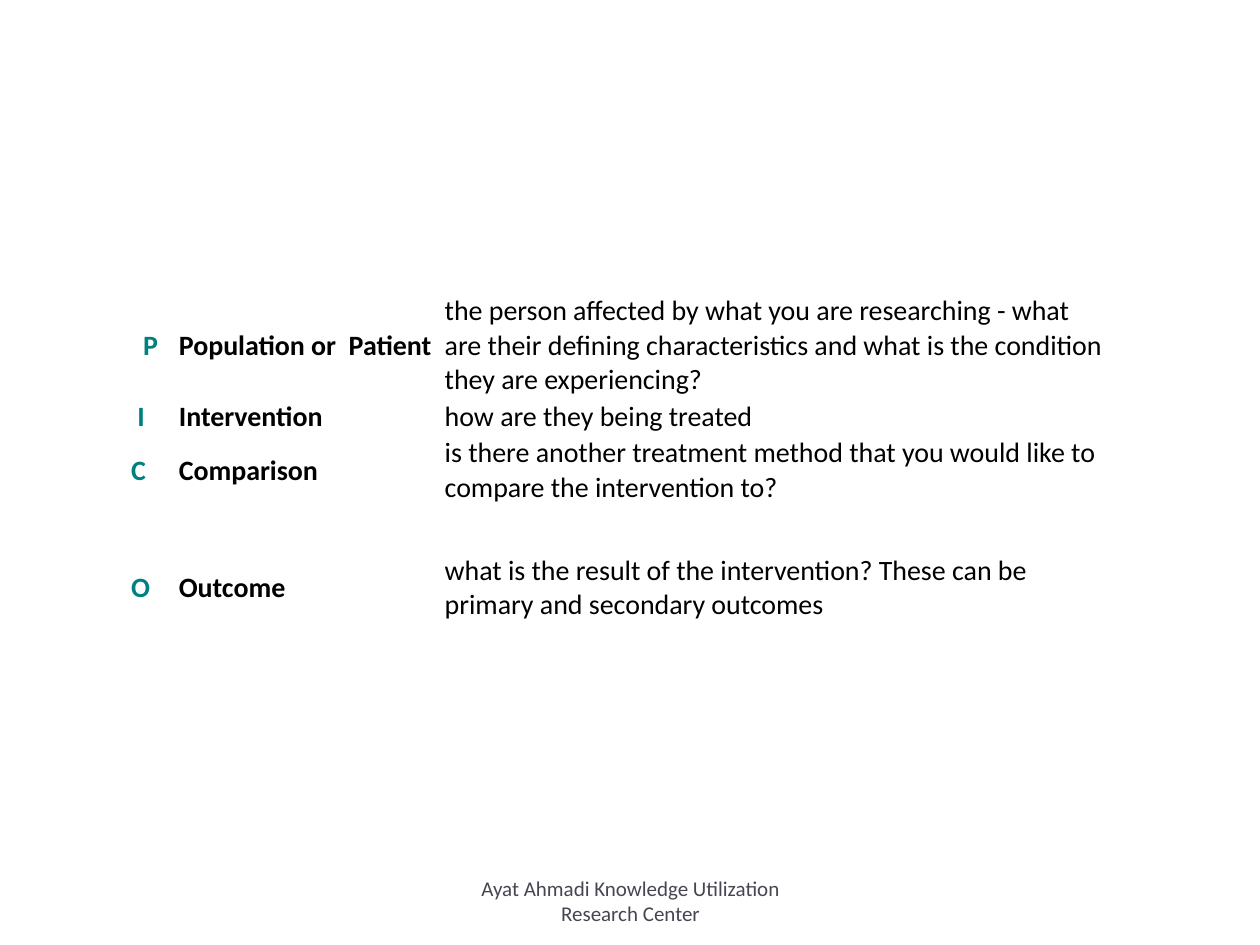
import pptx
import pptx.dml.color
import pptx.enum.text
import pptx.util

ALIGN = pptx.enum.text.PP_ALIGN
MIDDLE = pptx.enum.text.MSO_ANCHOR.MIDDLE
TEAL, BLACK, SLATE = "008080", "000000", "464653"
WIDE, HIGH = 10, 7.5
INSET = 0.01

# Letter, its left inset in inches (None centres it), term, meaning
ROWS = [
    ("P", None, "Population or  Patient",
     "the person affected by what you are researching - what are their "
     "defining characteristics and what is the condition they are "
     "experiencing?"),
    ("I", 0.11, "Intervention", "how are they being treated"),
    ("C", 0.06, "Comparison",
     "is there another treatment method that you would like to compare "
     "the intervention to?"),
    ("O", 0.06, "Outcome",
     "what is the result of the intervention? These can be primary and "
     "secondary outcomes"),
]
COLS = (0.43, 2.11, 5.25)
TALLS = (0.82, 0.28, 0.5, 1.3)


def hue(code):
    return pptx.dml.color.RGBColor.from_string(code)


class Page:
    """Holds the deck, the current slide and its text style."""

    face = "Calibri"

    def __init__(self):
        self.deck = pptx.Presentation()
        self.deck.slide_width = pptx.util.Inches(WIDE)
        self.deck.slide_height = pptx.util.Inches(HIGH)
        self.slide = self.deck.slides.add_slide(self.deck.slide_layouts[6])

    def place(self, left, top, width, height):
        """Turn shares of the slide into lengths."""
        sides = (WIDE, HIGH, WIDE, HIGH)
        return [pptx.util.Inches(part * side)
                for part, side in zip((left, top, width, height), sides)]

    def text(self, frame, words, size, color, bold=False, align=ALIGN.LEFT):
        frame.word_wrap = True
        para = frame.paragraphs[0]
        para.alignment = align
        run = para.add_run()
        run.text = words
        look = {"name": self.face, "size": pptx.util.Pt(size), "bold": bold}
        for key, value in look.items():
            setattr(run.font, key, value)
        run.font.color.rgb = hue(color)

    def cell(self, cell, words, color, bold, left=INSET, align=ALIGN.LEFT):
        edge = pptx.util.Inches(INSET)
        look = {"margin_left": pptx.util.Inches(left), "margin_right": edge,
                "margin_top": edge, "margin_bottom": edge,
                "vertical_anchor": MIDDLE}
        for key, value in look.items():
            setattr(cell, key, value)
        cell.fill.background()
        self.text(cell.text_frame, words, 16, color, bold, align)

    def table(self, box, rows):
        grid = self.slide.shapes.add_table(
            len(rows), len(COLS), *self.place(*box)).table
        grid.first_row = grid.horz_banding = False
        for col, width in zip(grid.columns, COLS):
            col.width = pptx.util.Inches(width)
        for row, tall, (letter, left, term, note) in zip(
                grid.rows, TALLS, rows):
            row.height = pptx.util.Inches(tall)
            first, second, third = row.cells
            if left is None:
                self.cell(first, letter, TEAL, True, align=ALIGN.CENTER)
            else:
                self.cell(first, letter, TEAL, True, left)
            self.cell(second, term, BLACK, True)
            self.cell(third, note, BLACK, False)

    def label(self, box, words):
        frame = self.slide.shapes.add_textbox(*self.place(*box)).text_frame
        frame.vertical_anchor = MIDDLE
        self.text(frame, words, 12, SLATE, align=ALIGN.CENTER)


def main():
    page = Page()
    page.table((0.098, 0.31, 0.78, 0.39), ROWS)
    page.label((0.342, 0.927, 0.317, 0.053),
               "Ayat Ahmadi Knowledge Utilization Research Center")
    page.deck.save("out.pptx")


if __name__ == "__main__":
    main()
